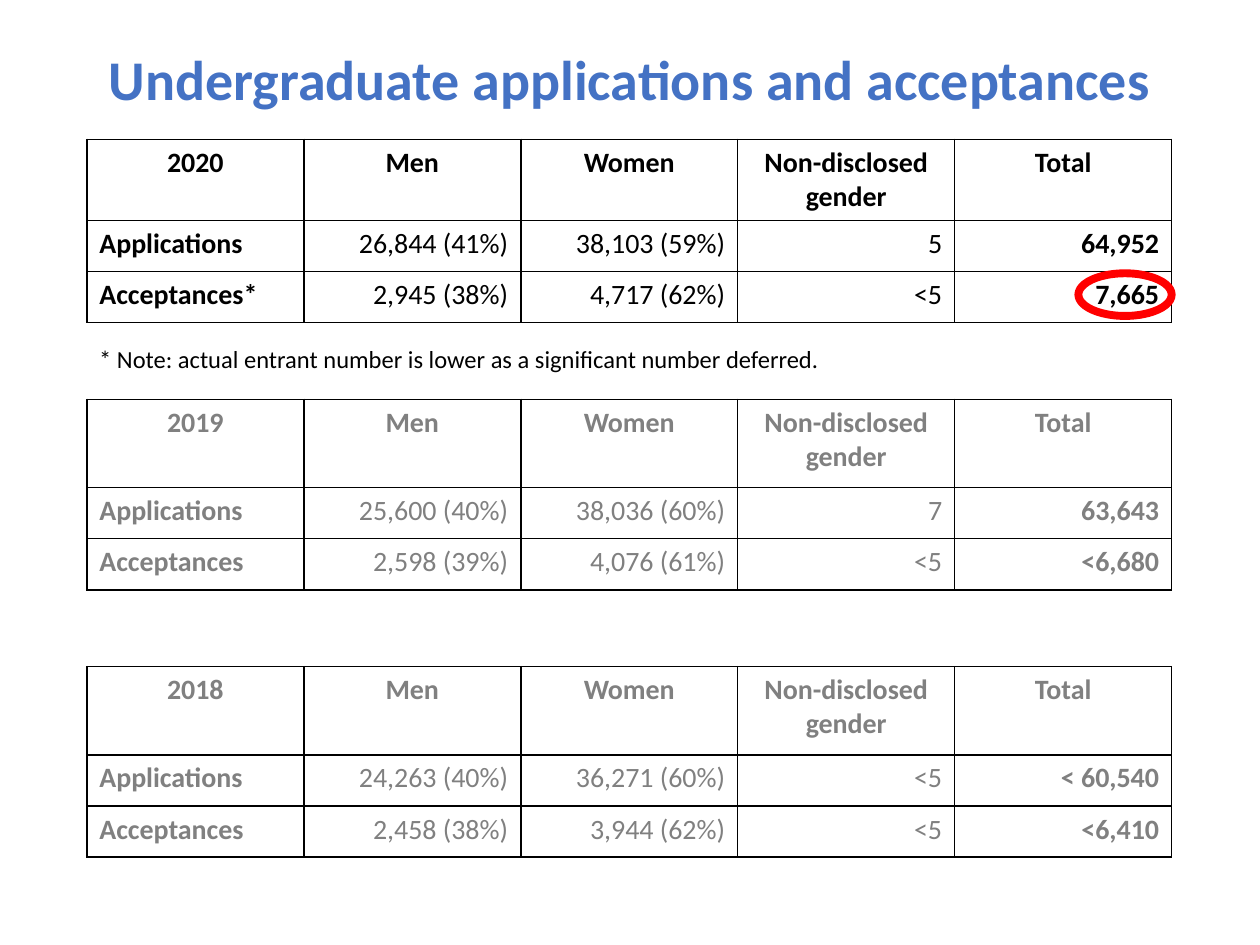
import lxml.etree
import pptx
import pptx.dml.color
import pptx.enum.shapes
import pptx.enum.text
import pptx.oxml
import pptx.oxml.ns
import pptx.util
from pptx.util import Cm, Pt

ALIGN = pptx.enum.text.PP_ALIGN
FONT = "Calibri"
BLACK, GREY, WHITE = "000000", "808080", "FFFFFF"
BLUE, RED = "4472C4", "FF0000"

LEFT, WIDTH = Cm(1.75), Cm(21.87)
ROW_HEIGHT = Cm(1.03)
CATEGORIES = ["Men", "Women", "Non-disclosed gender", "Total"]

# top (cm), header height (cm), text colour, cell fill, rows
YEARS = [
    (13.44, 1.78, GREY, None, [
        ["2018", *CATEGORIES],
        ["Applications", "24,263 (40%)", "36,271 (60%)", "<5", "< 60,540"],
        ["Acceptances", "2,458 (38%)", "3,944 (62%)", "<5", "<6,410"]]),
    (8.05, 1.78, GREY, WHITE, [
        ["2019", *CATEGORIES],
        ["Applications", "25,600 (40%)", "38,036 (60%)", "7", "63,643"],
        ["Acceptances", "2,598 (39%)", "4,076 (61%)", "<5", "<6,680"]]),
    (2.81, 1.63, BLACK, None, [
        ["2020", *CATEGORIES],
        ["Applications", "26,844 (41%)", "38,103 (59%)", "5", "64,952"],
        ["Acceptances*", "2,945 (38%)", "4,717 (62%)", "<5", "7,665"]]),
]


def rgb(hex_colour):
    return pptx.dml.color.RGBColor.from_string(hex_colour)


def format_paragraph(paragraph, size, colour, bold=False, align=ALIGN.LEFT):
    paragraph.alignment = align
    font = paragraph.font
    font.name, font.size, font.bold = FONT, Pt(size), bold
    font.color.rgb = rgb(colour)


def add_borders(cell):
    properties = cell._tc.get_or_add_tcPr()
    for side in ("lnL", "lnR", "lnT", "lnB"):
        properties.append(pptx.oxml.parse_xml(
            f'<a:{side} {pptx.oxml.ns.nsdecls("a")} w="{Pt(1)}">'
            f'<a:solidFill><a:srgbClr val="{BLACK}"/></a:solidFill></a:{side}>'))


def cell_alignment(row, column):
    if row == 0:
        return ALIGN.CENTER
    return ALIGN.LEFT if column == 0 else ALIGN.RIGHT


def add_year_table(slide, top, header_height, colour, fill, rows):
    columns = len(rows[0])
    heights = [Cm(header_height)] + [ROW_HEIGHT] * (len(rows) - 1)
    table = slide.shapes.add_table(
        len(rows), columns, LEFT, Cm(top), WIDTH, sum(heights)).table
    table.first_row = table.horz_banding = False
    for r, values in enumerate(rows):
        table.rows[r].height = heights[r]
        for c, value in enumerate(values):
            cell = table.cell(r, c)
            cell.text = value
            bold = r == 0 or c in (0, columns - 1)
            format_paragraph(cell.text_frame.paragraphs[0], 16, colour, bold,
                             cell_alignment(r, c))
            add_borders(cell)
            if fill:
                cell.fill.solid()
                cell.fill.fore_color.rgb = rgb(fill)
            else:
                cell.fill.background()


def set_title(slide, wording):
    title = slide.shapes.title
    title.left, title.top = Cm(1.19), Cm(0.53)
    title.width, title.height = Cm(23.01), Cm(2.26)
    title.text_frame.text = wording
    title.text_frame.vertical_anchor = pptx.enum.text.MSO_ANCHOR.MIDDLE
    heading = title.text_frame.paragraphs[0]
    format_paragraph(heading, 32, BLUE, True, ALIGN.CENTER)
    heading.line_spacing = 0.9


def add_note(slide, wording):
    frame = slide.shapes.add_textbox(LEFT, Cm(6.81), WIDTH, Cm(0.86)).text_frame
    frame.word_wrap = True
    frame.auto_size = pptx.enum.text.MSO_AUTO_SIZE.SHAPE_TO_FIT_TEXT
    frame.text = wording
    format_paragraph(frame.paragraphs[0], 14, BLACK)


def add_highlight_ring(slide):
    ring = slide.shapes.add_shape(
        pptx.enum.shapes.MSO_SHAPE.OVAL, Cm(21.74), Cm(5.51), Cm(1.88), Cm(0.86))
    ring.shadow.inherit = False
    ring.fill.background()
    ring.line.color.rgb = rgb(RED)
    ring.line.width = Pt(4.5)


def main():
    deck = pptx.Presentation()
    deck.slide_width, deck.slide_height = Cm(25.4), Cm(19.05)
    slide = deck.slides.add_slide(deck.slide_layouts.get_by_name("Title Only"))
    set_title(slide, "Undergraduate applications and acceptances")
    for year in YEARS:
        add_year_table(slide, *year)
    add_note(slide, "* Note: actual entrant number is lower as a "
                    "significant number deferred.")
    add_highlight_ring(slide)
    deck.save("out.pptx")


if __name__ == "__main__":
    main()
